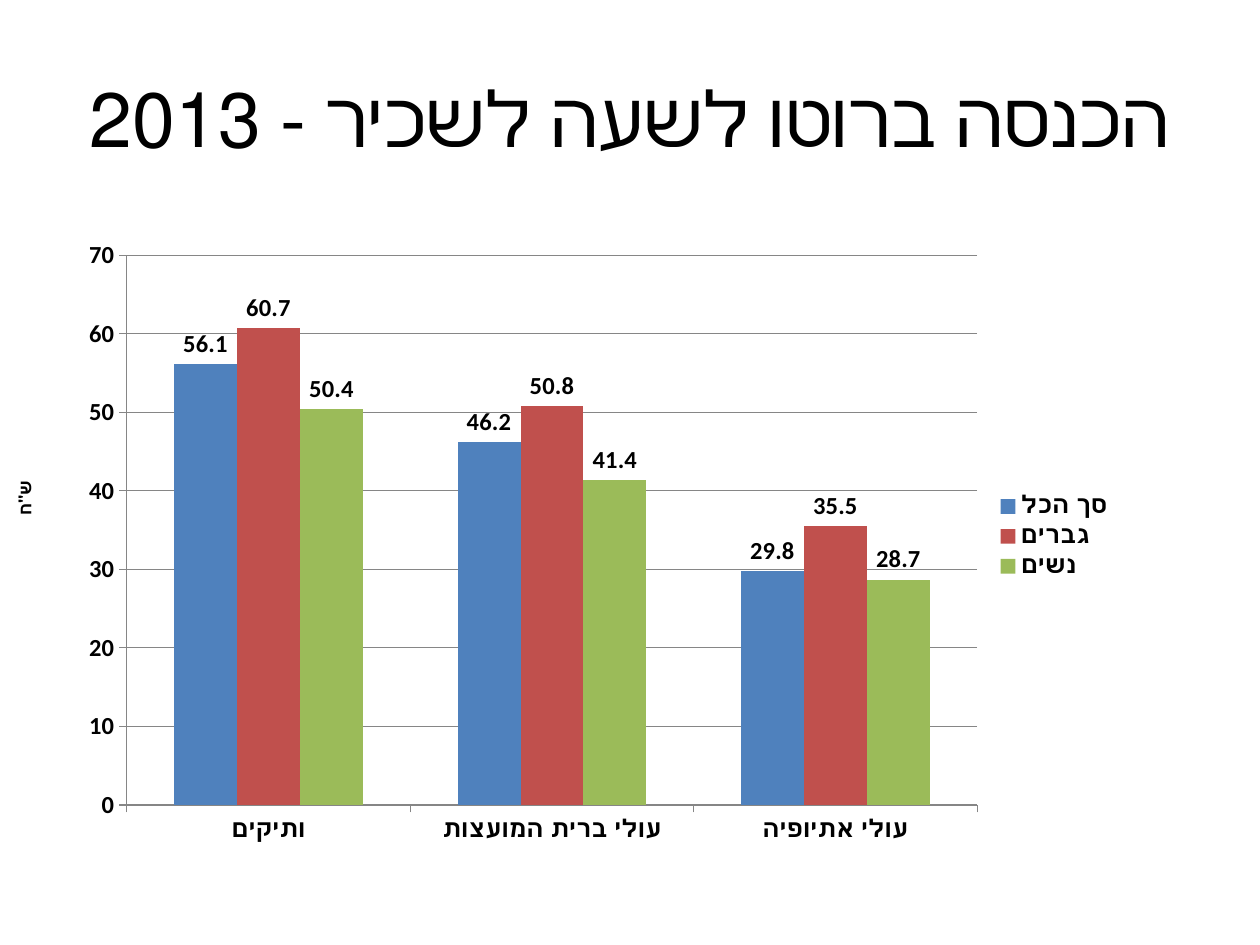
from lxml import etree
from pptx import Presentation
from pptx.chart.data import CategoryChartData
from pptx.dml.color import RGBColor
from pptx.enum import chart as charts, text
from pptx.oxml import ns
from pptx.util import Pt

FONT = "Calibri"
BLACK, GRAY = "000000", "868686"
CATEGORIES = ["ותיקים", "עולי ברית המועצות", "עולי אתיופיה"]
SERIES = [
    ("סך הכל", "4F81BD", [56.1, 46.2, 29.8]),
    ("גברים", "C0504D", [60.7, 50.8, 35.5]),
    ("נשים", "9BBB59", [50.4, 41.4, 28.7]),
]


def color(value):
    return RGBColor.from_string(value)


def style_font(font, size, bold):
    font.name = FONT
    font.size = Pt(size)
    font.bold = bold
    font.color.rgb = color(BLACK)


def style_line(line):
    line.color.rgb = color(GRAY)
    line.width = Pt(0.75)


def add_text(page, left, top, width, height, words, size, bold=False, rotation=None):
    """Add a centred right-to-left line of text."""
    box = page.shapes.add_textbox(Pt(left), Pt(top), Pt(width), Pt(height))
    frame = box.text_frame
    frame.word_wrap = True
    frame.vertical_anchor = text.MSO_ANCHOR.MIDDLE
    if rotation:
        frame._txBody.bodyPr.set("vert", rotation)
    para = frame.paragraphs[0]
    para.alignment = text.PP_ALIGN.CENTER
    para._p.get_or_add_pPr().set("rtl", "1")
    span = para.add_run()
    span.text = words
    style_font(span.font, size, bold)


def place_plot(chart, **fractions):
    """Fix the inner plot area as fractions of the chart frame."""
    area = chart._chartSpace.chart.plotArea
    for old in area.findall(ns.qn("c:layout")):
        area.remove(old)
    layout = etree.Element(ns.qn("c:layout"))
    manual = etree.SubElement(layout, ns.qn("c:manualLayout"))
    settings = {"layoutTarget": "inner", "xMode": "edge", "yMode": "edge", **fractions}
    for name, value in settings.items():
        etree.SubElement(manual, ns.qn("c:" + name)).set("val", str(value))
    area.insert(0, layout)


def add_income_chart(page, left, top, width, height):
    data = CategoryChartData(number_format="General")
    data.categories = CATEGORIES
    for name, _, values in SERIES:
        data.add_series(name, values)
    chart = page.shapes.add_chart(
        charts.XL_CHART_TYPE.COLUMN_CLUSTERED,
        Pt(left), Pt(top), Pt(width), Pt(height), data,
    ).chart
    chart.has_title = False
    style_font(chart.font, 14, True)
    place_plot(chart, x=0.06, y=0.05, w=0.8, h=0.88)

    # Legend
    chart.has_legend = True
    chart.legend.position = charts.XL_LEGEND_POSITION.RIGHT
    chart.legend.include_in_layout = False

    # Axes
    for axis in (chart.category_axis, chart.value_axis):
        axis.major_tick_mark = charts.XL_TICK_MARK.OUTSIDE
        axis.minor_tick_mark = charts.XL_TICK_MARK.NONE
        style_line(axis.format.line)
    scale = chart.value_axis
    scale.minimum_scale, scale.maximum_scale, scale.major_unit = 0, 70, 10
    scale.has_major_gridlines = True
    style_line(scale.major_gridlines.format.line)

    # Columns and their values
    plot = chart.plots[0]
    plot.gap_width = 150
    plot.overlap = 0
    plot.vary_by_categories = False
    for series, (_, fill, _) in zip(plot.series, SERIES):
        series.format.fill.solid()
        series.format.fill.fore_color.rgb = color(fill)
        series.data_labels.show_value = True
        series.data_labels.position = charts.XL_LABEL_POSITION.OUTSIDE_END


def main():
    deck = Presentation()
    deck.slide_width, deck.slide_height = Pt(720), Pt(540)
    page = deck.slides.add_slide(deck.slide_layouts[6])

    # Title
    add_text(page, 36, 21.6, 648, 90, "הכנסה ברוטו לשעה לשכיר - 2013", 44)
    # Income by group
    add_income_chart(page, 36, 128, 607.5, 357)
    # Unit of the value axis
    add_text(page, 3, 242, 22, 85, 'ש"ח', 10, bold=True, rotation="vert270")

    deck.save("out.pptx")


if __name__ == "__main__":
    main()
